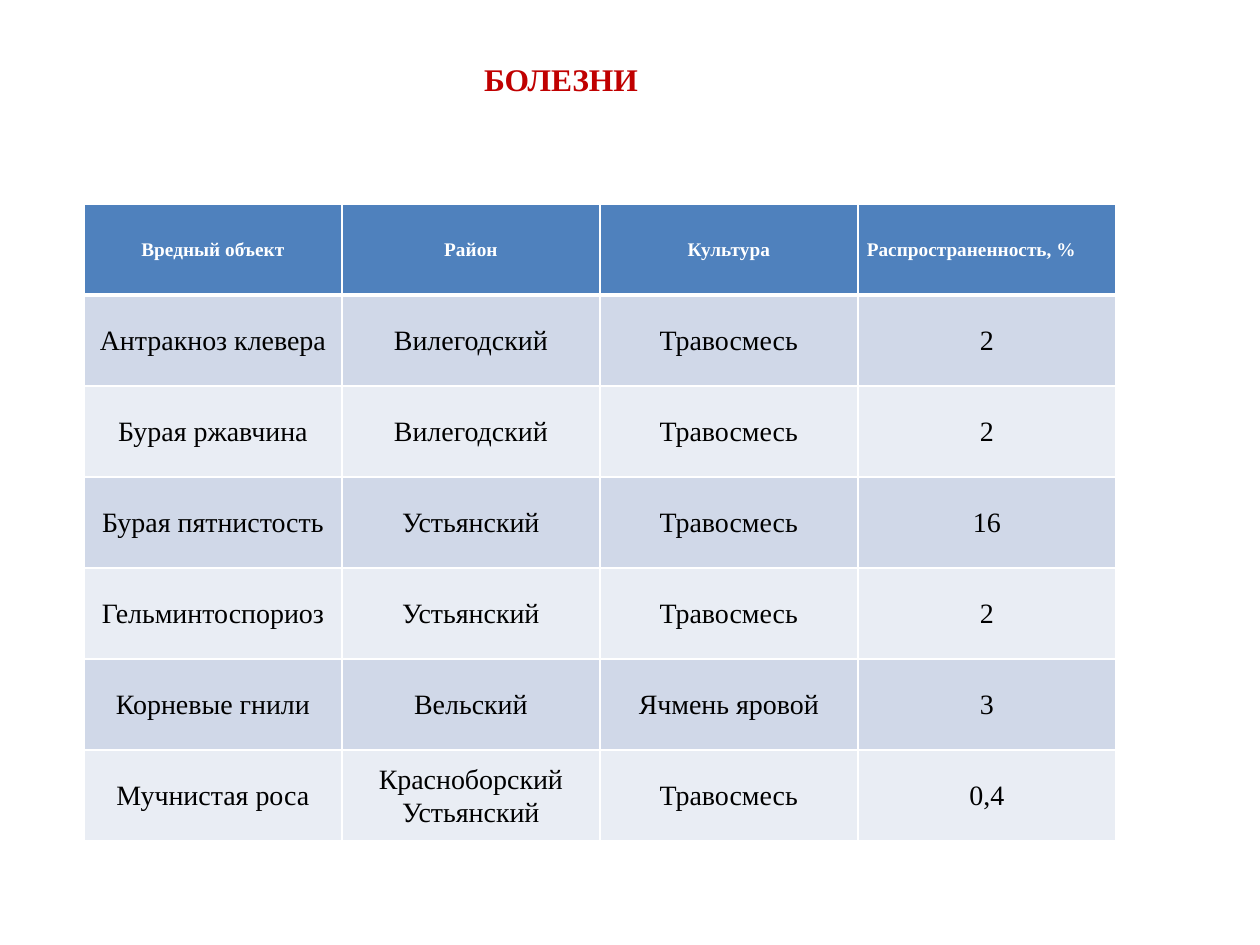
from lxml.etree import SubElement
from pptx import Presentation
from pptx.dml.color import RGBColor
from pptx.enum.text import MSO_ANCHOR, PP_ALIGN
from pptx.oxml.ns import qn
from pptx.util import Emu, Pt

FONT = "Times New Roman"
ROWS = [
    ["Вредный объект", "Район", "Культура", "Распространенность, %"],
    ["Антракноз клевера", "Вилегодский", "Травосмесь", "2"],
    ["Бурая ржавчина", "Вилегодский", "Травосмесь", "2"],
    ["Бурая пятнистость", "Устьянский", "Травосмесь", "16"],
    ["Гельминтоспориоз", "Устьянский", "Травосмесь", "2"],
    ["Корневые гнили", "Вельский", "Ячмень яровой", "3"],
    ["Мучнистая роса", "Красноборский\nУстьянский", "Травосмесь", "0,4"],
]
COLUMN_WIDTH, ROW_HEIGHT = 258, 91


def px(length):
    return Emu(round(length * 914400 / 126))


def style(para, size, color, bold):
    for span in para.runs:
        span.font.name = FONT
        span.font.size = Pt(size)
        span.font.bold = bold
        span.font.color.rgb = RGBColor.from_string(color)


deck = Presentation()
deck.slide_width, deck.slide_height = px(1260), px(945)
page = deck.slides.add_slide(deck.slide_layouts[5])

title = page.shapes.title
title.left, title.top, title.width, title.height = px(441), px(54), px(248), px(50)
title.text_frame.text = "БОЛЕЗНИ "
title.text_frame.vertical_anchor = MSO_ANCHOR.TOP
title.text_frame.paragraphs[0].alignment = PP_ALIGN.CENTER
style(title.text_frame.paragraphs[0], 18, "C00000", True)

table = page.shapes.add_table(
    len(ROWS), len(ROWS[0]), px(84), px(204),
    px(COLUMN_WIDTH * len(ROWS[0])), px(ROW_HEIGHT * len(ROWS)),
).table
for column in table.columns:
    column.width = px(COLUMN_WIDTH)

for row_index, texts in enumerate(ROWS):
    table.rows[row_index].height = px(ROW_HEIGHT)
    header = row_index == 0
    fill = "4F81BD" if header else ("E9EDF4", "D0D8E8")[row_index % 2]
    for column_index, text in enumerate(texts):
        cell = table.cell(row_index, column_index)
        cell.margin_left = cell.margin_right = px(9)
        cell.margin_top = cell.margin_bottom = 0
        cell.vertical_anchor = MSO_ANCHOR.MIDDLE
        properties = cell._tc.get_or_add_tcPr()
        for side in "LRTB":
            thick = (header and side == "B") or (row_index == 1 and side == "T")
            line = SubElement(properties, qn(f"a:ln{side}"), w=str(Pt(3 if thick else 1)))
            SubElement(SubElement(line, qn("a:solidFill")), qn("a:srgbClr"), val="FFFFFF")
        cell.fill.solid()
        cell.fill.fore_color.rgb = RGBColor.from_string(fill)
        cell.text_frame.text = text
        left_aligned = header and column_index == 3
        for para in cell.text_frame.paragraphs:
            para.alignment = PP_ALIGN.LEFT if left_aligned else PP_ALIGN.CENTER
            para.line_spacing = 1.07
            style(para, 11 if header else 16, "FFFFFF" if header else "000000", header)

deck.save("out.pptx")
